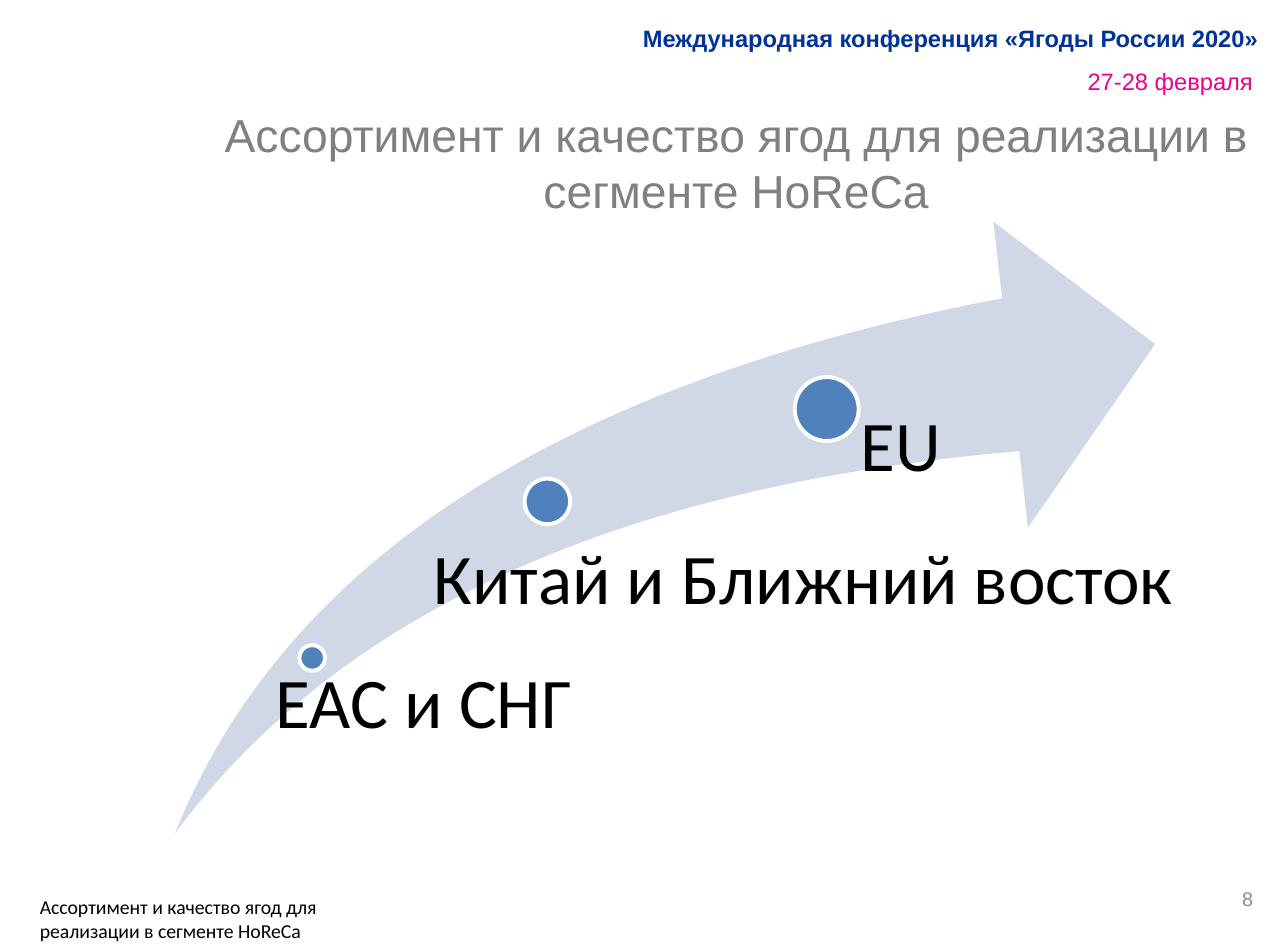
from pptx import Presentation
from pptx.dml.color import RGBColor
from pptx.enum.shapes import MSO_SHAPE
from pptx.enum.text import MSO_ANCHOR, MSO_AUTO_SIZE, PP_ALIGN
from pptx.util import Cm, Inches, Pt

WIDE, HIGH = Cm(23), Cm(17)
TOPIC = "Ассортимент и качество ягод для реализации в сегменте HoReCa"
PAD = (0.08, 0.04, 0.08, 0.04)
LEFT, MID, RIGHT = PP_ALIGN.LEFT, PP_ALIGN.CENTER, PP_ALIGN.RIGHT
TOP, CENTER = MSO_ANCHOR.TOP, MSO_ANCHOR.MIDDLE

TITLE = (1.46, 0.71, 7.43, 0.78)
LABELS = [
    ("27-28 февраля", (7.28, 0.35, 1.61, 0.37), 12, "Arial", "EB028B", RIGHT, TOP, Pt(20.4), False),
    ("Международная конференция «Ягоды России 2020»", (4.23, 0.07, 4.7, 0.39),
     12, "Arial", "003399", RIGHT, CENTER, 1.0, True),
    ("8", (6.78, 6.14, 2.11, 0.36), 10, "Arial", "8C8C8C", RIGHT, CENTER, 1.0, False),
    (TOPIC, (0.2, 6.25, 2.41, 0.42), 10, "Calibri", "000000", LEFT, TOP, Pt(12.2), False),
]
ARROW = (1.23, 1.56, 6.89, 4.3)
STEPS = [
    ("EAC и СНГ", (0.14, 0.713), 0.18, (1.85, 4.69, 2.29, 1.12), 0.09),
    ("Китай и Ближний восток", (0.38, 0.457), 0.32, (2.88, 3.82, 6.01, 1.75), 0.17),
    ("EU", (0.665, 0.306), 0.45, (5.81, 2.88, 1.65, 2.99), 0.24),
]


def color(code):
    """Turn a hex string into a colour."""
    return RGBColor.from_string(code)


def write(shape, text, size, font, hue, align=LEFT, anchor=TOP, space=1.0, bold=False, pad=PAD):
    """Fill a shape with one styled paragraph."""
    frame = shape.text_frame
    frame.word_wrap = True
    frame.auto_size = MSO_AUTO_SIZE.NONE
    frame.vertical_anchor = anchor
    (frame.margin_left, frame.margin_top,
     frame.margin_right, frame.margin_bottom) = map(Inches, pad)
    frame.text = text
    para = frame.paragraphs[0]
    para.alignment, para.line_spacing = align, space
    para.font.size, para.font.name, para.font.bold = Pt(size), font, bold
    para.font.color.rgb = color(hue)


def draw(slide, kind, box, fill):
    """Add a flat filled shape without an outline."""
    shape = slide.shapes.add_shape(kind, *map(Inches, box))
    shape.shadow.inherit = False
    shape.fill.solid()
    shape.fill.fore_color.rgb = color(fill)
    shape.line.fill.background()
    return shape


def label(slide, text, box, *style, **extra):
    """Add a text box."""
    write(slide.shapes.add_textbox(*map(Inches, box)), text, *style, **extra)


def main():
    """Build and save the slide."""
    deck = Presentation()
    deck.slide_width, deck.slide_height = WIDE, HIGH
    deck.element.sldSz.attrib.pop("type", None)
    slide = deck.slides.add_slide(deck.slide_layouts[5])
    title = slide.shapes.title
    title.left, title.top, title.width, title.height = map(Inches, TITLE)
    write(title, TOPIC, 23.4, "Arial", "808080", MID)

    swoosh = draw(slide, MSO_SHAPE.SWOOSH_ARROW, ARROW, "D0D8E8")
    swoosh.adjustments[0] = swoosh.adjustments[1] = 0.25
    left, top, wide, high = ARROW
    for text, (across, down), size, box, inset in STEPS:
        spot = (left + across * wide - size / 2, top + down * high - size / 2, size, size)
        dot = draw(slide, MSO_SHAPE.OVAL, spot, "4F81BD")
        dot.line.color.rgb, dot.line.width = color("FFFFFF"), Pt(2)
        label(slide, text, box, 36, "Calibri", "000000", space=0.9, pad=(inset, 0, 0, 0))

    for item in LABELS:
        label(slide, *item)
    deck.save("out.pptx")


if __name__ == "__main__":
    main()
